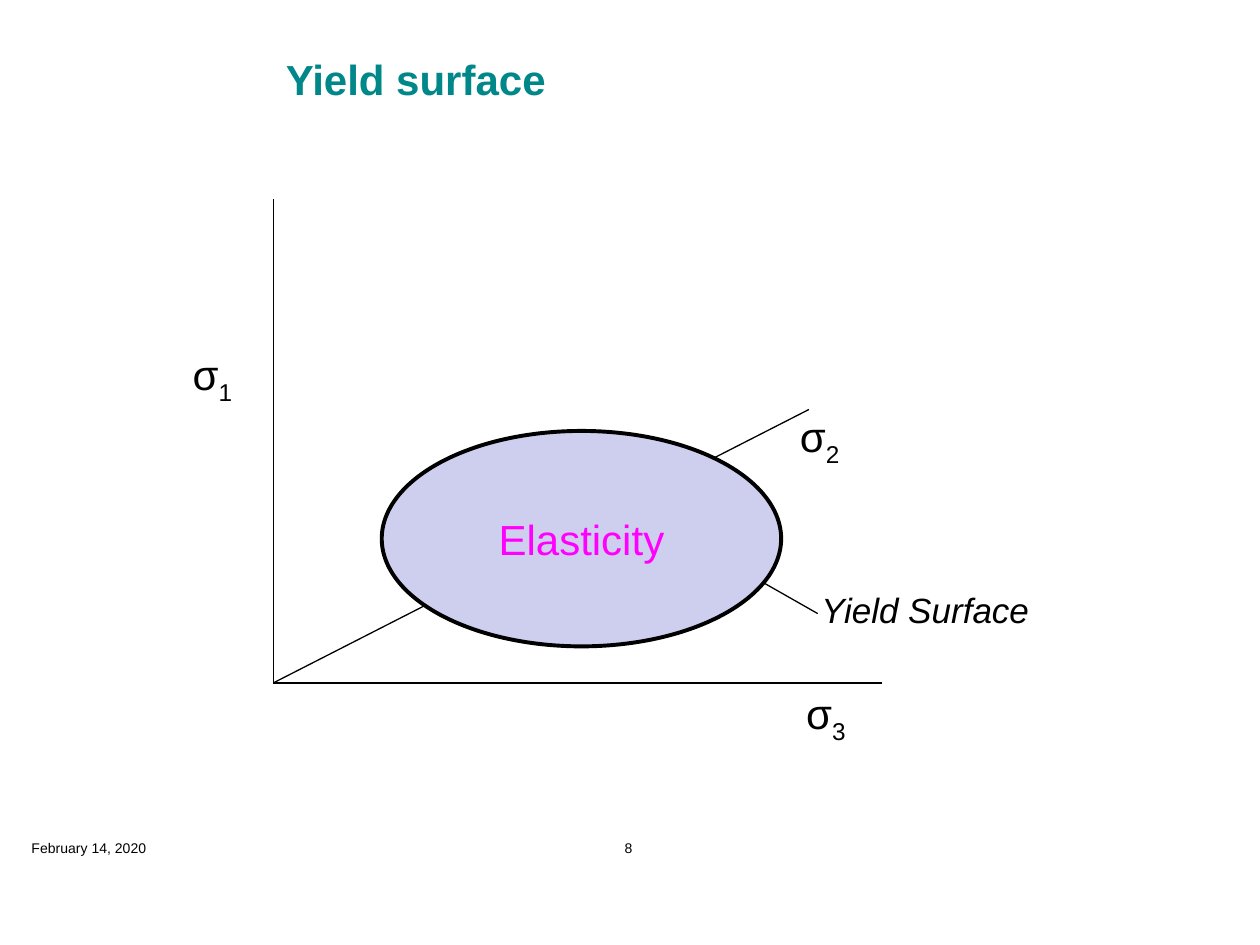
from dataclasses import dataclass

from lxml.etree import SubElement
from pptx import Presentation
from pptx.dml.color import RGBColor
from pptx.enum.shapes import MSO_CONNECTOR, MSO_SHAPE
from pptx.enum.text import MSO_ANCHOR, PP_ALIGN
from pptx.oxml.ns import qn
from pptx.util import Inches, Pt


@dataclass(frozen=True)
class Theme:
    font: str = "Arial"
    ink: RGBColor = RGBColor(0x00, 0x00, 0x00)
    heading: RGBColor = RGBColor(0x00, 0x87, 0x89)
    region: RGBColor = RGBColor(0xCE, 0xCE, 0xEF)
    accent: RGBColor = RGBColor(0xFF, 0x00, 0xFF)
    large: Pt = Pt(24)
    label: Pt = Pt(20)
    small: Pt = Pt(8)
    thin: Pt = Pt(0.75)
    thick: Pt = Pt(2.25)


THEME = Theme()


def add_span(para, text, color=THEME.ink, **formats):
    span = para.add_run()
    span.text = text
    span.font.color.rgb = color
    values = {"name": THEME.font, "size": THEME.large, **formats}
    for name, value in values.items():
        setattr(span.font, name, value)
    return span


def add_text(page, box, text, anchor=MSO_ANCHOR.TOP, align=PP_ALIGN.LEFT,
             inset=True, **formats):
    frame = page.shapes.add_textbox(*map(Inches, box)).text_frame
    frame.word_wrap = True
    frame.vertical_anchor = anchor
    if not inset:
        for side in ("left", "top", "right", "bottom"):
            setattr(frame, f"margin_{side}", 0)
    para = frame.paragraphs[0]
    para.alignment = align
    add_span(para, text, **formats)
    return para


def add_line(page, start, end):
    line = page.shapes.add_connector(
        MSO_CONNECTOR.STRAIGHT, *map(Inches, (*start, *end)))
    line.line.color.rgb = THEME.ink
    line.line.width = THEME.thin
    SubElement(line._element.spPr, qn("a:effectLst"))


def add_stress_label(page, box, index):
    para = add_text(page, box, "σ")
    subscript = add_span(para, index)
    subscript.font._element.set("baseline", "-25000")


def add_title(page, box):
    add_text(page, box, "Yield surface", MSO_ANCHOR.MIDDLE,
             color=THEME.heading, bold=True)


def add_footer(page, box):
    left, top, width, height = box
    add_text(page, (left, top, 2.33, height), "February 14, 2020",
             inset=False, size=THEME.small)
    number_width = 0.76
    number_left = left + (width - number_width) / 2
    add_text(page, (number_left, top, number_width, height), "8",
             align=PP_ALIGN.CENTER, inset=False, size=THEME.small)


def add_diagram(page, box):
    left, top, width, height = box
    origin = (left, top + height)

    # Principal stress axes
    axis_ends = [(left, top), (left + width, top + height),
                 (left + 4.25, top + 1.67)]
    for end in axis_ends:
        add_line(page, origin, end)
    label_offsets = {"1": (-0.74, 1.14), "2": (4.08, 1.63), "3": (4.13, 3.83)}
    for index, (across, down) in label_offsets.items():
        add_stress_label(page, (left + across, top + down, 0.92, 0.5), index)

    # Elastic region
    region = page.shapes.add_shape(
        MSO_SHAPE.OVAL,
        *map(Inches, (left + 0.86, top + 1.84, 3.17, 1.71)))
    region.shadow.inherit = False
    region.fill.solid()
    region.fill.fore_color.rgb = THEME.region
    region.line.color.rgb = THEME.ink
    region.line.width = THEME.thick
    region.text_frame.vertical_anchor = MSO_ANCHOR.MIDDLE
    para = region.text_frame.paragraphs[0]
    para.alignment = PP_ALIGN.CENTER
    add_span(para, "Elasticity", THEME.accent)

    # Surface callout
    add_text(page, (left + 4.25, top + 3.04, 2.36, 0.44), "Yield Surface",
             size=THEME.label, italic=True)
    add_line(page, (left + 4.32, top + 3.29), (left + 3.88, top + 3.04))


def main():
    deck = Presentation()
    deck.slide_width, deck.slide_height = Inches(10), Inches(7.5)
    page = deck.slides.add_slide(deck.slide_layouts[6])
    add_title(page, (2.17, 0.25, 7.58, 0.75))
    add_diagram(page, (2.17, 1.58, 4.83, 3.84))
    add_footer(page, (0.25, 6.66, 9.48, 0.14))
    deck.save("out.pptx")


if __name__ == "__main__":
    main()
